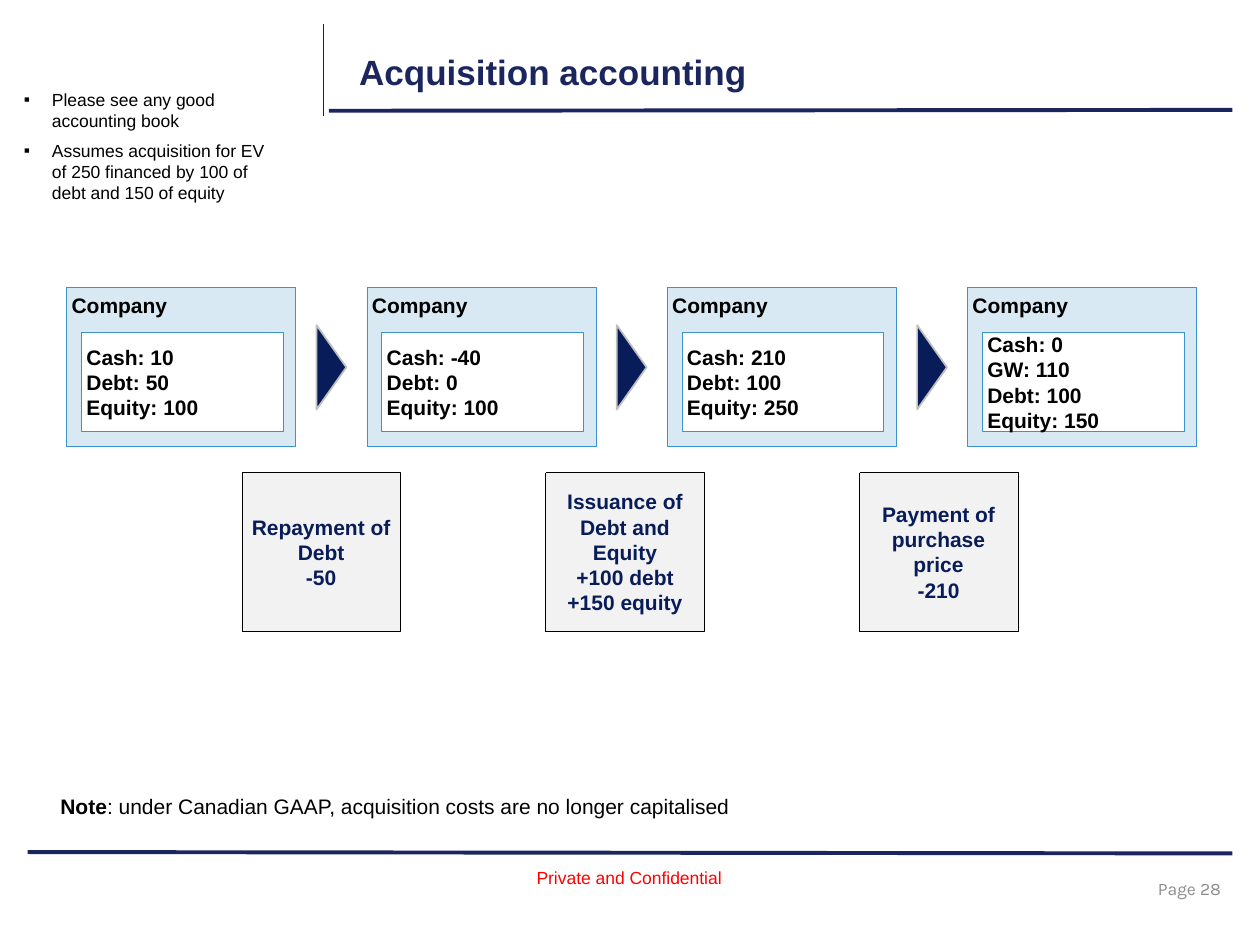
from lxml import etree
from pptx import Presentation
from pptx.dml.color import RGBColor
from pptx.enum import dml, shapes, text
from pptx.oxml import ns
from pptx.util import Pt

NAVY = RGBColor(0x1B, 0x26, 0x5F)
DEEP_NAVY = RGBColor(0x09, 0x1C, 0x5A)
RULE_BLUE = RGBColor(0x00, 0x23, 0x68)
BORDER_BLUE = RGBColor(0x3C, 0x93, 0xC8)
PALE_BLUE = RGBColor(0xD8, 0xE9, 0xF4)
PALE_GREY = RGBColor(0xF2, 0xF2, 0xF2)
MID_GREY = RGBColor(0xBF, 0xBF, 0xBF)
PAGE_GREY = RGBColor(0x8C, 0x8C, 0x8C)
RED = RGBColor(0xFF, 0x00, 0x00)
BLACK = RGBColor(0, 0, 0)
WHITE = RGBColor(0xFF, 0xFF, 0xFF)

LEFT, TOP, PITCH = 38.1, 164.2, 171.6
BALANCES = [
    ["Cash: 10", "Debt: 50", "Equity: 100"],
    ["Cash: -40", "Debt: 0", "Equity: 100"],
    ["Cash: 210", "Debt: 100", "Equity: 250"],
    ["Cash: 0", "GW: 110", "Debt: 100", "Equity: 150"],
]
STEPS = [
    (138.2, ["Repayment of Debt", "-50"]),
    (311.8, ["Issuance of Debt and Equity", "+100 debt", "+150 equity"]),
    (491, ["Payment of purchase price", "-210"]),
]
COMMENTS = [
    "Please see any good accounting book",
    "Assumes acquisition for EV of 250 financed by 100 of debt and 150 of equity",
]


def set_font(paragraph, size, color, bold=False, name="Arial"):
    font = paragraph.font
    font.name, font.size, font.bold = name, Pt(size), bold
    font.color.rgb = color


def place(shape, left, top, width, height):
    shape.left, shape.top = Pt(left), Pt(top)
    shape.width, shape.height = Pt(width), Pt(height)


def write_lines(frame, lines, size, color, bold=False, align=text.PP_ALIGN.LEFT, name="Arial"):
    for index, line in enumerate(lines):
        paragraph = frame.paragraphs[0] if index == 0 else frame.add_paragraph()
        paragraph.text = line
        paragraph.alignment = align
        set_font(paragraph, size, color, bold, name)


def add_rule(slide, x1, y1, x2, y2, color, width):
    rule = slide.shapes.add_connector(
        shapes.MSO_CONNECTOR.STRAIGHT, Pt(x1), Pt(y1), Pt(x2), Pt(y2))
    rule.line.color.rgb = color
    rule.line.width = Pt(width)
    etree.SubElement(rule._element.spPr, ns.qn("a:effectLst"))


def add_preset(parent, kind, box, fill, line, line_width):
    shape = parent.shapes.add_shape(kind, *map(Pt, box))
    shape.shadow.inherit = False
    shape.fill.solid()
    shape.fill.fore_color.rgb = fill
    shape.line.color.rgb = line
    shape.line.width = Pt(line_width)
    return shape


def add_box(parent, box, lines, fill, line, line_width, color=BLACK,
            anchor=text.MSO_ANCHOR.MIDDLE, align=text.PP_ALIGN.LEFT):
    shape = add_preset(parent, shapes.MSO_SHAPE.RECTANGLE, box, fill, line, line_width)
    frame = shape.text_frame
    frame.word_wrap = True
    frame.vertical_anchor = anchor
    frame.margin_left = frame.margin_right = frame.margin_top = frame.margin_bottom = Pt(2.8)
    write_lines(frame, lines, 12, color, True, align)
    return shape


def add_company(slide, left, lines):
    group = slide.shapes.add_group_shape()
    add_box(group, (left, TOP, 131, 90.7), ["Company"], PALE_BLUE, BORDER_BLUE, 0.5,
            anchor=text.MSO_ANCHOR.TOP)
    add_box(group, (left + 8.5, TOP + 25.7, 115.2, 56.9), lines, WHITE, BORDER_BLUE, 0.5)


def add_arrow(slide, left):
    arrow = add_preset(slide, shapes.MSO_SHAPE.RIGHT_ARROW, (left, TOP + 21.6, 17, 48.2),
                       DEEP_NAVY, MID_GREY, 1)
    arrow.adjustments[0], arrow.adjustments[1] = 0.5, 1


def add_step(slide, left, lines):
    step = add_box(slide, (left, 270, 90.7, 90.7), lines, PALE_GREY, BLACK, 0.25,
                   DEEP_NAVY, align=text.PP_ALIGN.CENTER)
    step.line.dash_style = dml.MSO_LINE.ROUND_DOT


def add_label(slide, left, top, width, height, wrap=False):
    frame = slide.shapes.add_textbox(Pt(left), Pt(top), Pt(width), Pt(height)).text_frame
    frame.word_wrap = wrap
    if not wrap:
        frame.auto_size = text.MSO_AUTO_SIZE.SHAPE_TO_FIT_TEXT
    return frame


def add_bullet(paragraph, indent):
    properties = paragraph._p.get_or_add_pPr()
    properties.set("marL", str(Pt(indent)))
    properties.set("indent", str(-Pt(indent)))
    etree.SubElement(properties, ns.qn("a:buFont"), typeface="Arial")
    etree.SubElement(properties, ns.qn("a:buChar"), char="▪")


def fill_title(slide):
    title = slide.shapes.title
    place(title, 198, 21.6, 486, 38.2)
    title.text_frame.vertical_anchor = text.MSO_ANCHOR.MIDDLE
    write_lines(title.text_frame, ["Acquisition accounting"], 20, NAVY, True)


def fill_comments(slide):
    body = slide.placeholders[1]
    place(body, 6.5, 47.5, 162, 387.4)
    frame = body.text_frame
    frame.auto_size = text.MSO_AUTO_SIZE.NONE
    for index, comment in enumerate(COMMENTS):
        paragraph = frame.paragraphs[0] if index == 0 else frame.add_paragraph()
        paragraph.text = comment
        add_bullet(paragraph, 16)
        paragraph.space_before, paragraph.space_after = Pt(0), Pt(5)
        set_font(paragraph, 10, BLACK)


def add_frame(slide):
    # Rules around the title and above the footer
    add_rule(slide, 15.8, 486.9, 704.2, 487.7, NAVY, 2.25)
    add_rule(slide, 188, 63.3, 704.2, 62.8, NAVY, 2.25)
    for top in (13.7, 18):
        add_rule(slide, 185, top, 185, top + 48.2, RULE_BLUE, 0.75)
    # Footer labels
    page = add_label(slide, 539.3, 493.2, 167.8, 28.8, wrap=True)
    page.vertical_anchor = text.MSO_ANCHOR.MIDDLE
    write_lines(page, ["Page 28 "], 10, PAGE_GREY, align=text.PP_ALIGN.RIGHT, name="Karla")
    write_lines(add_label(slide, 299.5, 491.8, 121, 19.4),
                ["Private and Confidential"], 10, RED)


def add_note(slide):
    paragraph = add_label(slide, 27.4, 450, 399.6, 21.6).paragraphs[0]
    set_font(paragraph, 12, BLACK)
    heading = paragraph.add_run()
    heading.text = "Note"
    heading.font.bold = True
    paragraph.add_run().text = ": under Canadian GAAP, acquisition costs are no longer capitalised"


def main():
    presentation = Presentation()
    presentation.slide_width, presentation.slide_height = Pt(720), Pt(540)
    slide = presentation.slides.add_slide(presentation.slide_layouts[1])

    add_frame(slide)
    fill_title(slide)
    fill_comments(slide)

    # Company balances, the steps between them and the arrows
    for index, lines in enumerate(BALANCES):
        add_company(slide, LEFT + index * PITCH, lines)
    for index, (left, lines) in enumerate(STEPS):
        add_step(slide, left, lines)
        add_arrow(slide, LEFT + index * PITCH + 142.8)

    add_note(slide)
    presentation.save("out.pptx")


if __name__ == "__main__":
    main()
